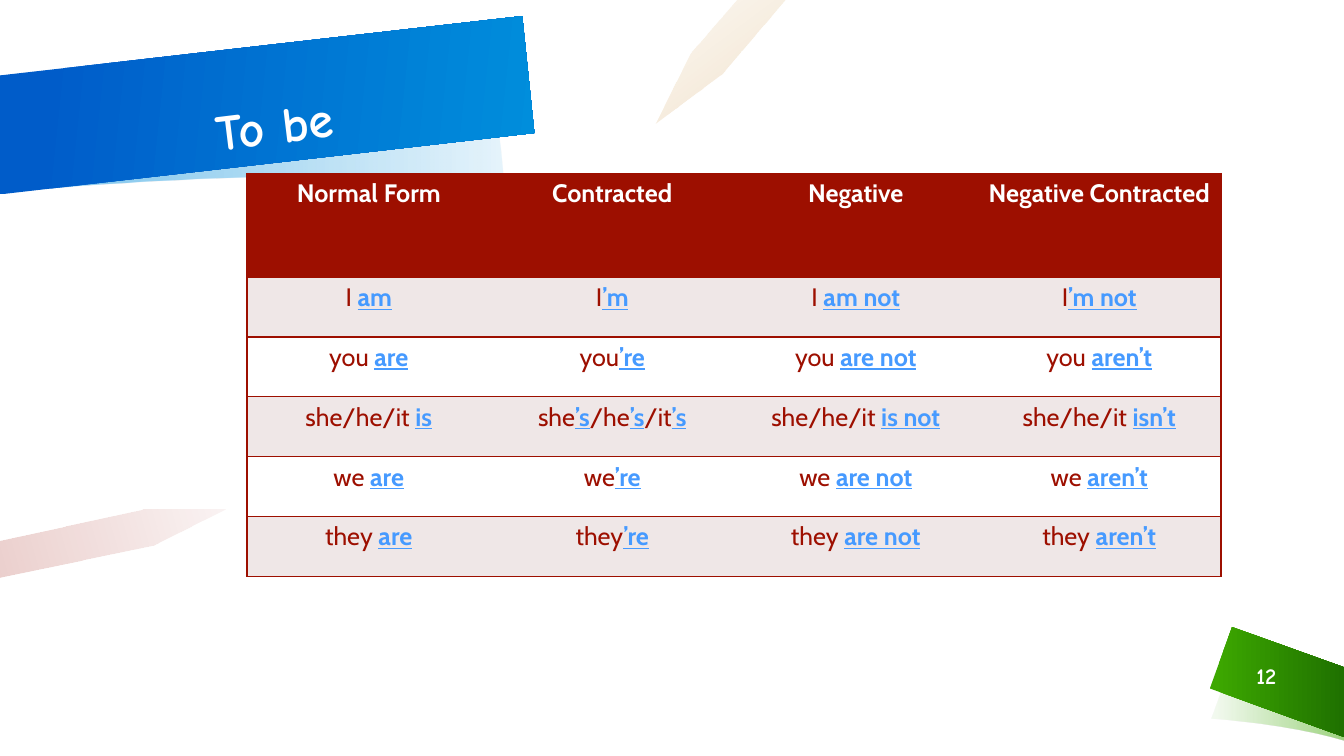
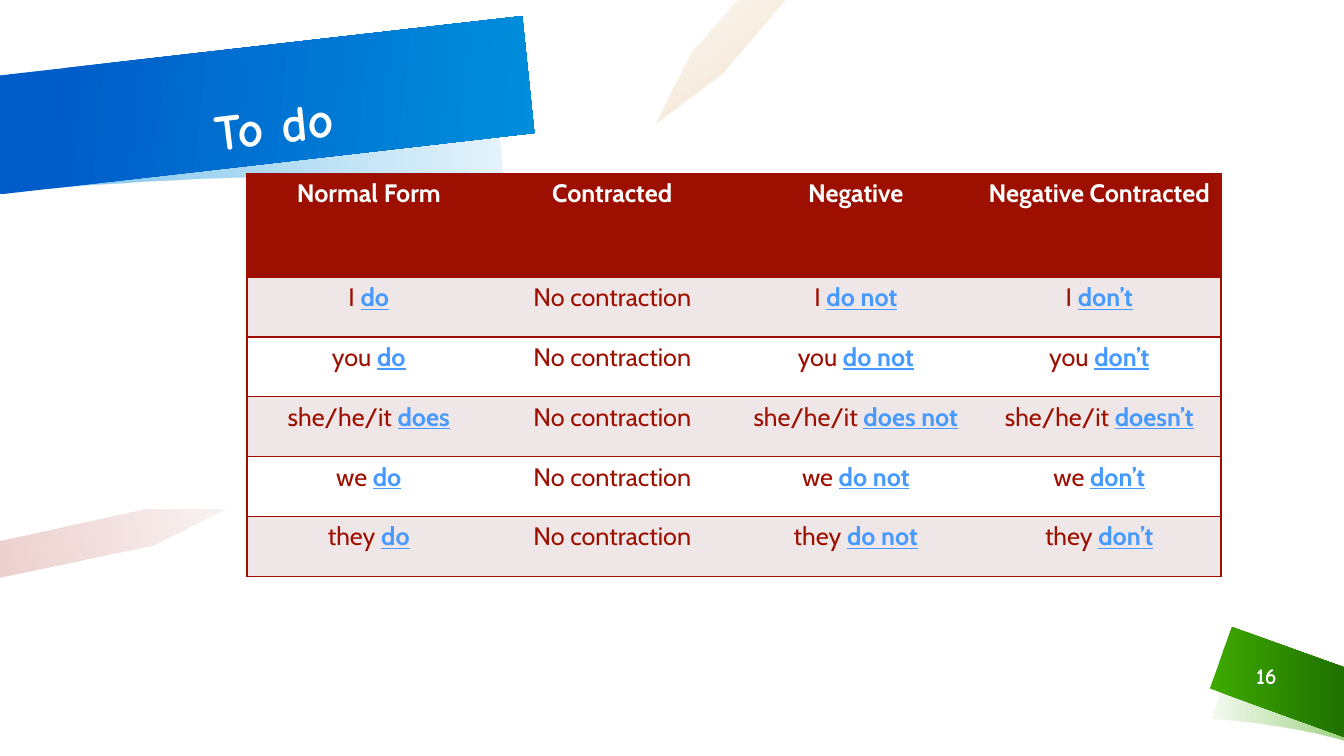
from lxml import etree
from pptx import Presentation
from pptx.dml.color import RGBColor
from pptx.enum.text import MSO_ANCHOR, PP_ALIGN
from pptx.oxml.ns import qn
from pptx.util import Inches, Pt

MIDDLE = MSO_ANCHOR.MIDDLE
CENTER = PP_ALIGN.CENTER
RED, BLUE, WHITE, PALE = "9D0F00", "469AFF", "FFFFFF", "EFE7E7"
GREEN, SKY, GOLD = "3DA800", "008EDC", "C07400"

# outline (a six-number entry is a curve), start stop, end stop, angle
DECOR = [
    ([(12.02, 7.13), (12.02, 7.13, 12.78, 7.18, 13.33, 7.35), (13.33, 6.68),
      (12.72, 6.51, 12.24, 6.52, 12.24, 6.52)],
     (3, GREEN, 6), (100, GREEN, 50), 0),
    ([(13.33, 6.62), (12.22, 6.22), (12, 6.83), (13.33, 7.31)],
     (3, GREEN, 100), (100, "1F7100", 100), 0),
    ([(4.99, 1.78), (4.87, 0.63), (4.87, 0.63, 3.13, 0.45, -0.02, 0.75),
      (-0.02, 1.91), (2.86, 1.63, 4.99, 1.78, 4.99, 1.78)],
     (0, SKY, 10), (88, SKY, 50), 180),
    ([(-0.01, 1.93), (5.3, 1.32), (5.18, 0.16), (-0.01, 0.75)],
     (9, "005CC9", 100), (100, SKY, 100), 6),
    ([(7.79, 0), (7.31, 0), (6.85, 0.53), (6.5, 1.23), (7.16, 0.74)],
     (0, GOLD, 5), (100, GOLD, 20), 53),
    ([(2.24, 5.05), (1.42, 5.05), (0, 5.36), (0, 5.73), (1.53, 5.41)],
     (0, RED, 5), (100, RED, 20), 164),
]
HEADS = ["Normal Form", "Contracted", "Negative", "Negative Contracted"]
BE = [
    ("I", "am", "I*’m*", "I*’m not*"),
    ("you", "are", "you*’re*", "you *aren’t*"),
    ("she/he/it", "is", "she*’s*/he*’s*/it*’s*", "she/he/it *isn’t*"),
    ("we", "are", "we*’re*", "we *aren’t*"),
    ("they", "are", "they*’re*", "they *aren’t*"),
]
DO = [(who, verb, "No contraction", f"{who} *{verb}n’t*") for who, verb in
      [("I", "do"), ("you", "do"), ("she/he/it", "does"), ("we", "do"), ("they", "do")]]
SLIDES = [("To be", "12", BE), ("To do", "16", DO)]


def color(code):
    return RGBColor.from_string(code)


def label(slide, text, left, top, width, height, size):
    box = slide.shapes.add_textbox(Inches(left), Inches(top), Inches(width), Inches(height))
    frame = box.text_frame
    frame.word_wrap = True
    frame.vertical_anchor = MIDDLE
    frame.text = text
    para = frame.paragraphs[0]
    para.alignment = CENTER
    font = para.runs[0].font
    font.name, font.size, font.bold = "Comic Neue", Pt(size), True
    font.color.rgb = color(WHITE)
    return box


deck = Presentation()
deck.slide_width, deck.slide_height = Inches(13.33), Inches(7.5)

for title, number, verbs in SLIDES:
    slide = deck.slides.add_slide(deck.slide_layouts[6])

    for outline, first, last, angle in DECOR:
        points = []
        for part in outline:
            if len(part) == 2:
                points.append(part)
                continue
            ends = [points[-1], part[:2], part[2:4], part[4:]]
            for step in range(1, 17):
                t = step / 16
                bases = ((1 - t) ** 3, 3 * t * (1 - t) ** 2, 3 * t * t * (1 - t), t ** 3)
                points.append(tuple(sum(b * end[axis] for b, end in zip(bases, ends))
                                    for axis in (0, 1)))
        points = [(Inches(x), Inches(y)) for x, y in points]
        pen = slide.shapes.build_freeform(*points[0])
        pen.add_line_segments(points[1:], close=True)
        shape = pen.convert_to_shape()
        shape.shadow.inherit = False
        shape.line.fill.background()
        shape.fill.gradient()
        shape.fill.gradient_angle = -angle % 360
        for stop, (place, code, alpha) in zip(shape.fill.gradient_stops, (first, last)):
            stop.position = place / 100
            stop.color.rgb = color(code)
        for tone, (place, code, alpha) in zip(
                shape.fill._xPr.iter(qn("a:srgbClr")), (first, last)):
            etree.SubElement(tone, qn("a:alpha"), val=str(alpha * 1000))

    label(slide, number, 12.21, 6.5, 0.7, 0.4, 16)
    label(slide, title, 0.32, 0.83, 4.8, 0.8, 36).rotation = 353

    rows = [HEADS]
    for who, verb, short, neg in verbs:
        rows.append([f"{who} *{verb}*", short, f"{who} *{verb} not*", neg])
    table = slide.shapes.add_table(len(rows), len(HEADS), Inches(2.45), Inches(1.72),
                                   Inches(9.66), Inches(4)).table
    for r, row in enumerate(rows):
        table.rows[r].height = Inches((4 - 1.03) / 5 if r else 1.03)
        for c, text in enumerate(row):
            cell = table.cell(r, c)
            cell.fill.solid()
            cell.fill.fore_color.rgb = color((PALE if r % 2 else WHITE) if r else RED)
            para = cell.text_frame.paragraphs[0]
            para.alignment = CENTER
            for i, piece in enumerate(text.split("*")):
                if not piece:
                    continue
                run = para.add_run()
                run.text = piece
                strong = i % 2 == 1
                font = run.font
                font.name, font.size = "Cabin", Pt(18)
                font.bold = strong or r == 0
                font.underline = strong
                font.color.rgb = color((BLUE if strong else RED) if r else WHITE)
            props = cell._tc.get_or_add_tcPr()
            sides = [("L", c == 0), ("R", c == len(row) - 1), ("T", True), ("B", True)]
            for spot, (side, shown) in enumerate(sides):
                edge = etree.Element(qn("a:ln" + side), w=str(Pt(1)))
                if shown:
                    paint = etree.SubElement(edge, qn("a:solidFill"))
                    etree.SubElement(paint, qn("a:srgbClr"), val=RED)
                else:
                    etree.SubElement(edge, qn("a:noFill"))
                props.insert(spot, edge)

deck.save("out.pptx")
